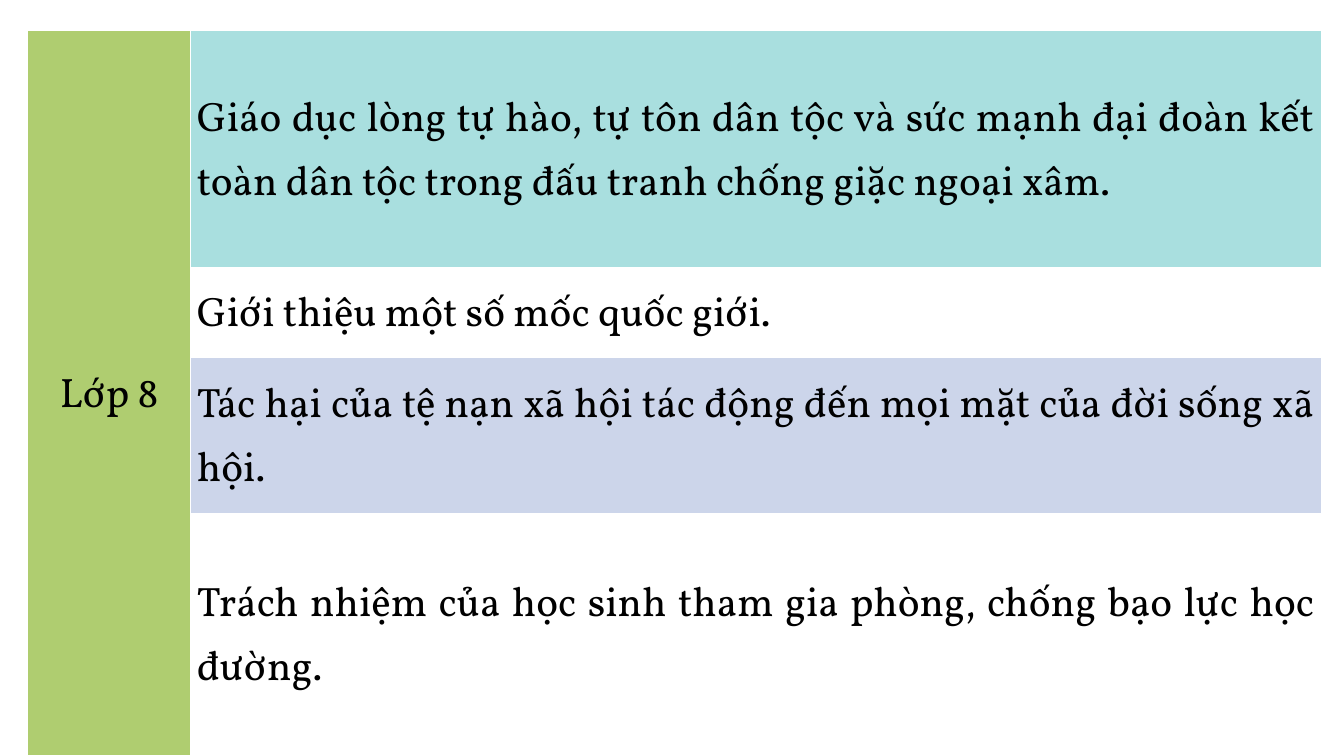
from lxml import etree
from pptx import Presentation
from pptx.dml.color import RGBColor
from pptx.enum.text import MSO_ANCHOR, PP_ALIGN
from pptx.oxml.ns import qn
from pptx.util import Cm, Pt

MIDDLE = MSO_ANCHOR.MIDDLE
CENTER, JUSTIFY = PP_ALIGN.CENTER, PP_ALIGN.JUSTIFY

BLACK = RGBColor(0x00, 0x00, 0x00)
WHITE = RGBColor(0xFF, 0xFF, 0xFF)
GREEN = RGBColor(0xAF, 0xCD, 0x70)
TEAL = RGBColor(0xA9, 0xDF, 0xDF)
LILAC = RGBColor(0xCC, 0xD5, 0xEA)

THIN, THICK = Pt(1.36), Pt(4.23)
GRADE = "Lớp 8"
COLS = (6.17, 42.75)
TOPICS = (  # row height in cm, fill, text
    (9.02, TEAL, "Giáo dục lòng tự hào, tự tôn dân tộc và sức mạnh đại đoàn kết "
                 "toàn dân tộc trong đấu tranh chống giặc ngoại xâm."),
    (3.35, WHITE, "Giới thiệu một số mốc quốc giới."),
    (5.89, LILAC, "Tác hại của tệ nạn xã hội tác động đến mọi mặt của đời sống xã hội."),
    (9.19, WHITE, "Trách nhiệm của học sinh tham gia phòng, chống bạo lực học đường."),
)


class Deck:
    font, size, pitch = "Vollkorn", Pt(44), Pt(68.6)
    inset = Cm(0.23)

    def __init__(self, slide):
        self.slide = slide

    def table(self, left, top, cols, rows):
        """Add an unstyled grid; all lengths are in cm."""
        frame = self.slide.shapes.add_table(
            len(rows), len(cols), Cm(left), Cm(top), Cm(sum(cols)), Cm(sum(rows)))
        grid = frame.table
        grid.first_row = grid.horz_banding = False
        for col, width in zip(grid.columns, cols):
            col.width = Cm(width)
        for row, height in zip(grid.rows, rows):
            row.height = Cm(height)
        return grid

    def cell(self, cell, text, fill, align, top=THIN, bottom=THIN):
        self.edges(cell, L=THIN, R=THIN, T=top, B=bottom)
        cell.fill.solid()
        cell.fill.fore_color.rgb = fill
        cell.vertical_anchor = MIDDLE
        cell.margin_left = cell.margin_right = self.inset
        cell.margin_top = cell.margin_bottom = self.inset
        cell.text = text
        para = cell.text_frame.paragraphs[0]
        para.alignment = align
        para.line_spacing = self.pitch
        para.font.name = self.font
        para.font.size = self.size
        para.font.color.rgb = BLACK

    def edges(self, cell, **widths):
        """Draw white borders; call before the fill is set."""
        props = cell._tc.get_or_add_tcPr()
        for side, width in widths.items():
            line = etree.SubElement(props, qn("a:ln" + side), w=str(int(width)))
            solid = etree.SubElement(line, qn("a:solidFill"))
            etree.SubElement(solid, qn("a:srgbClr"), val=str(WHITE))


def main():
    prs = Presentation()
    prs.slide_width, prs.slide_height = Cm(50.8), Cm(28.58)
    deck = Deck(prs.slides.add_slide(prs.slide_layouts[6]))

    grid = deck.table(1.04, 1.14, COLS, [topic[0] for topic in TOPICS])
    grade = grid.cell(0, 0)
    grade.merge(grid.cell(len(TOPICS) - 1, 0))
    deck.cell(grade, GRADE, GREEN, CENTER, bottom=THICK)
    for i, (_, fill, text) in enumerate(TOPICS):
        deck.cell(grid.cell(i, 1), text, fill, JUSTIFY,
                  top=THICK if i == 1 else THIN,
                  bottom=THICK if i == 0 else THIN)

    prs.save("out.pptx")


if __name__ == "__main__":
    main()
